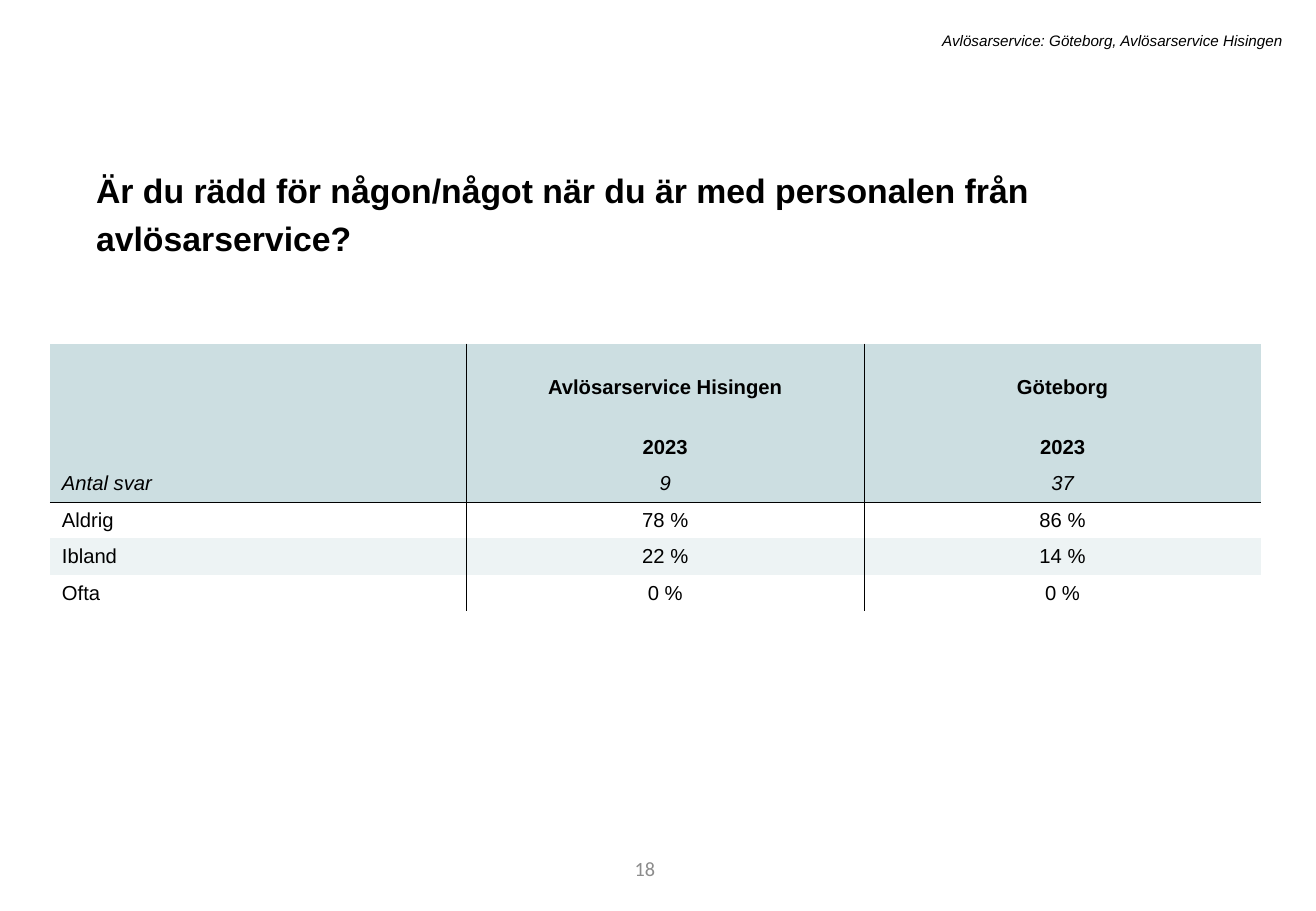
from lxml import etree
from pptx import Presentation
from pptx.dml.color import RGBColor
from pptx.enum import text
from pptx.oxml import ns
from pptx.util import Inches, Pt

COLORS = {"text": "000000", "number": "8C8C8C", "line": "000000",
          "header": "CCDEE1", "band": "EDF3F4"}
LEFT, CENTER, RIGHT = (text.PP_ALIGN.LEFT, text.PP_ALIGN.CENTER,
                       text.PP_ALIGN.RIGHT)
MIDDLE, BOTTOM = text.MSO_ANCHOR.MIDDLE, text.MSO_ANCHOR.BOTTOM

ROWS = [
    ["", "Avlösarservice Hisingen", "Göteborg"],
    ["", "2023", "2023"],
    ["Antal svar", "9", "37"],
    ["Aldrig", "78 %", "86 %"],
    ["Ibland", "22 %", "14 %"],
    ["Ofta", "0 %", "0 %"],
]
COL_WIDTHS = [3.43, 3.27, 3.27]
ROW_HEIGHTS = [0.5, 0.5, 0.3, 0.3, 0.3, 0.3]
COUNT_ROW = 2  # last row of the table head


def format_paragraph(p, size, align=LEFT, color="text", name="Arial",
                     bold=False, italic=False):
    p.alignment = align
    p.font.name, p.font.size = name, Pt(size)
    p.font.bold, p.font.italic = bold, italic
    p.font.color.rgb = RGBColor.from_string(COLORS[color])


def add_label(s, content, box, size, **style):
    sp = s.shapes.add_textbox(*map(Inches, box))
    tf = sp.text_frame
    tf.word_wrap = True
    tf.vertical_anchor = MIDDLE
    tf.text = content
    format_paragraph(tf.paragraphs[0], size, RIGHT, **style)


def set_title(s, content, box):
    sp = s.shapes.title
    sp.left, sp.top, sp.width, sp.height = map(Inches, box)
    tf = sp.text_frame
    tf.text = content
    tf.word_wrap = True
    tf.auto_size = text.MSO_AUTO_SIZE.NONE
    tf.vertical_anchor = text.MSO_ANCHOR.TOP
    p = tf.paragraphs[0]
    format_paragraph(p, 20, bold=True)
    p.line_spacing = 1.2
    p.space_before = Pt(10)


def set_borders(cell, visible):
    """Draw the named edges (L, R, T, B) and hide the others."""
    tc_pr = cell._tc.get_or_add_tcPr()
    for edge in "LRTB":
        ln = etree.SubElement(tc_pr, ns.qn(f"a:ln{edge}"), w=str(Pt(0.25)))
        if edge in visible:
            fill = etree.SubElement(ln, ns.qn("a:solidFill"))
            etree.SubElement(fill, ns.qn("a:srgbClr"), val=COLORS["line"])
        else:
            etree.SubElement(ln, ns.qn("a:noFill"))


def fill_cell(cell, color):
    if color:
        cell.fill.solid()
        cell.fill.fore_color.rgb = RGBColor.from_string(COLORS[color])
    else:
        cell.fill.background()


def row_color(row):
    if row <= COUNT_ROW:
        return "header"
    return "band" if (row - COUNT_ROW) % 2 == 0 else None


def cell_edges(row, col):
    return (("L" if col > 0 else "")
            + ("R" if col < len(COL_WIDTHS) - 1 else "")
            + ("T" if row == COUNT_ROW + 1 else "")
            + ("B" if row == COUNT_ROW else ""))


def add_answer_table(s, left, top):
    table = s.shapes.add_table(
        len(ROWS), len(COL_WIDTHS), Inches(left), Inches(top),
        Inches(sum(COL_WIDTHS)), Inches(sum(ROW_HEIGHTS))).table
    table.first_row = table.horz_banding = False
    for column, width in zip(table.columns, COL_WIDTHS):
        column.width = Inches(width)
    for i, (row, height) in enumerate(zip(table.rows, ROW_HEIGHTS)):
        row.height = Inches(height)
        for j, cell in enumerate(row.cells):
            cell.text = ROWS[i][j]
            cell.vertical_anchor = BOTTOM if i < COUNT_ROW else MIDDLE
            format_paragraph(cell.text_frame.paragraphs[0], 12,
                             CENTER if j else LEFT,
                             bold=i < COUNT_ROW, italic=i == COUNT_ROW)
            set_borders(cell, cell_edges(i, j))
            fill_cell(cell, row_color(i))


def main():
    prs = Presentation()
    prs.slide_width, prs.slide_height = Inches(10.83), Inches(7.5)
    s = prs.slides.add_slide(prs.slide_layouts[5])

    # Heading and unit name
    set_title(s, "Är du rädd för någon/något när du är med personalen från "
              "avlösarservice?", (0.69, 1.28, 9.4, 0.47))
    add_label(s, "Avlösarservice: Göteborg, Avlösarservice Hisingen",
              (1.79, 0.21, 8.86, 0.25), 9, italic=True)

    # Answers
    add_answer_table(s, 0.41, 2.83)

    # Page number
    add_label(s, "18", (3.05, 6.95, 2.44, 0.4), 12,
              color="number", name="Calibri")

    prs.save("out.pptx")


if __name__ == "__main__":
    main()
